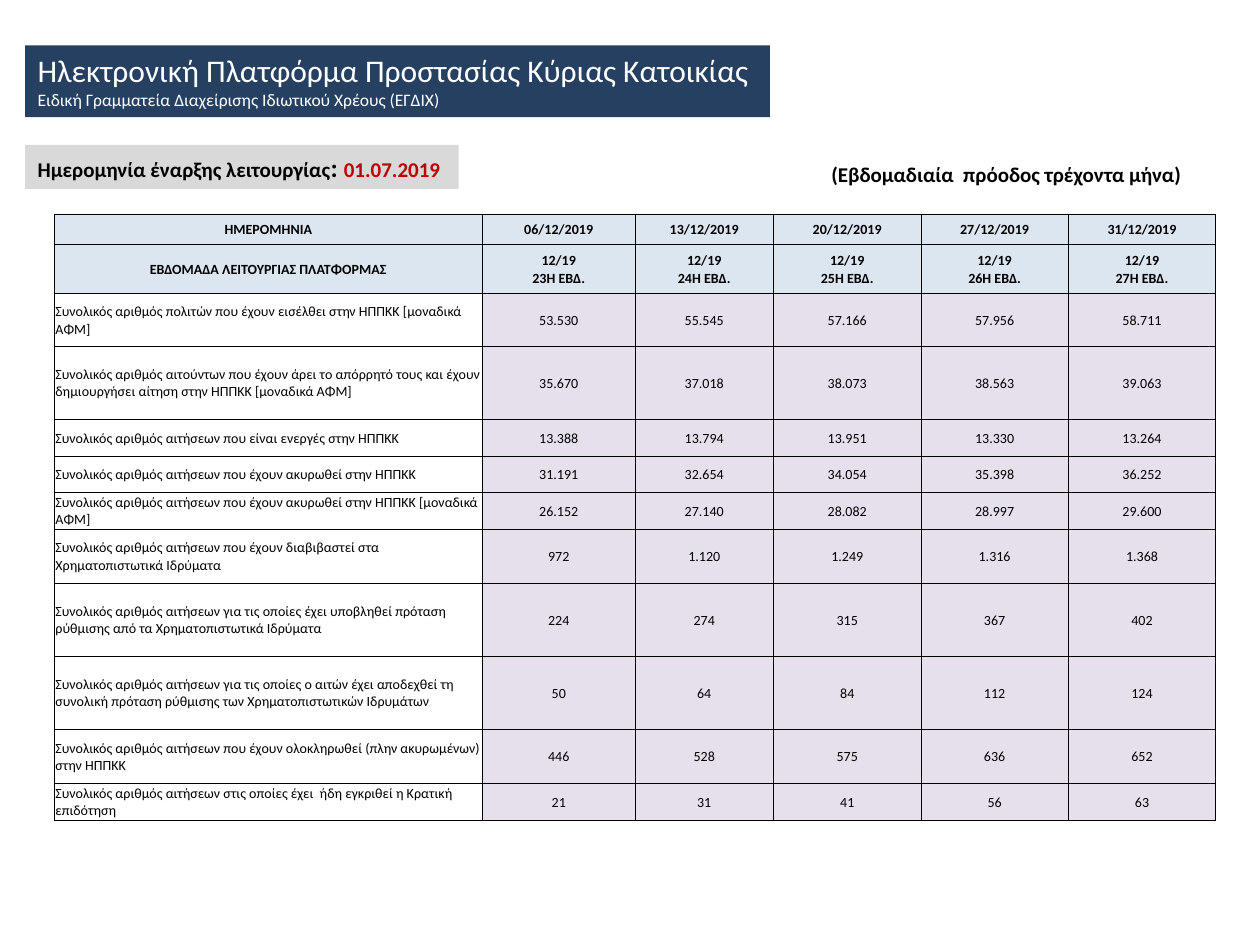
from lxml.etree import SubElement
from pptx import Presentation
from pptx.dml.color import RGBColor
from pptx.enum.shapes import MSO_SHAPE as Shape
from pptx.enum.text import MSO_ANCHOR as Anchor, MSO_AUTO_SIZE as AutoSize, PP_ALIGN as Align
from pptx.oxml.ns import qn
from pptx.util import Inches, Pt

FONT = "Calibri"
BLACK, WHITE, RED = "000000", "FFFFFF", "C00000"
NAVY, GREY, HEADER_BLUE, VALUE_LILAC = "254061", "D9D9D9", "DCE6F1", "E6E0EC"

TITLE = [
    [("Ηλεκτρονική Πλατφόρμα Προστασίας Κύριας Κατοικίας", 18, WHITE)],
    [("Ειδική Γραμματεία Διαχείρισης Ιδιωτικού Χρέους (ΕΓΔΙΧ)", 10, WHITE)],
]
START_DATE = [[
    ("Ημερομηνία έναρξης λειτουργίας", 12, BLACK),
    (": ", 15, BLACK),
    ("01.07.2019", 12, RED),
]]
PERIOD = [[("(Εβδομαδιαία  πρόοδος τρέχοντα μήνα)", 12, BLACK)]]
BOXES = [
    (START_DATE, (0.2, 1.15, 3.44, 0.35), GREY, True),
    (TITLE, (0.2, 0.36, 5.91, 0.57), NAVY, False),
    (PERIOD, (6.5, 1.23, 3.02, 0.3), None, True),
]

DATES = ["06/12/2019", "13/12/2019", "20/12/2019", "27/12/2019", "31/12/2019"]
FIRST_WEEK = 23
MEASURES = [
    (0.42, "Συνολικός αριθμός πολιτών που έχουν εισέλθει στην ΗΠΠΚΚ [μοναδικά ΑΦΜ]",
     "53.530 55.545 57.166 57.956 58.711"),
    (0.58, "Συνολικός αριθμός αιτούντων που έχουν άρει το απόρρητό τους και έχουν "
     "δημιουργήσει αίτηση στην ΗΠΠΚΚ [μοναδικά ΑΦΜ]",
     "35.670 37.018 38.073 38.563 39.063"),
    (0.29, "Συνολικός αριθμός αιτήσεων που είναι ενεργές στην ΗΠΠΚΚ",
     "13.388 13.794 13.951 13.330 13.264"),
    (0.29, "Συνολικός αριθμός αιτήσεων που έχουν ακυρωθεί στην ΗΠΠΚΚ",
     "31.191 32.654 34.054 35.398 36.252"),
    (0.29, "Συνολικός αριθμός αιτήσεων που έχουν ακυρωθεί στην ΗΠΠΚΚ [μοναδικά ΑΦΜ]",
     "26.152 27.140 28.082 28.997 29.600"),
    (0.43, "Συνολικός αριθμός αιτήσεων που έχουν διαβιβαστεί στα Χρηματοπιστωτικά Ιδρύματα",
     "972 1.120 1.249 1.316 1.368"),
    (0.58, "Συνολικός αριθμός αιτήσεων για τις οποίες έχει υποβληθεί πρόταση ρύθμισης "
     "από τα Χρηματοπιστωτικά Ιδρύματα",
     "224 274 315 367 402"),
    (0.58, "Συνολικός αριθμός αιτήσεων για τις οποίες ο αιτών έχει αποδεχθεί τη συνολική "
     "πρόταση ρύθμισης των Χρηματοπιστωτικών Ιδρυμάτων",
     "50 64 84 112 124"),
    (0.43, "Συνολικός αριθμός αιτήσεων που έχουν ολοκληρωθεί (πλην ακυρωμένων) στην ΗΠΠΚΚ",
     "446 528 575 636 652"),
    (0.29, "Συνολικός αριθμός αιτήσεων στις οποίες έχει  ήδη εγκριθεί η Κρατική επιδότηση",
     "21 31 41 56 63"),
]
COLUMN_WIDTHS = [3.4, 1.21, 1.1, 1.17, 1.17, 1.17]
HEADER_HEIGHTS = [0.24, 0.39]
TABLE_LEFT, TABLE_TOP = 0.43, 1.7


def color(value):
    return RGBColor.from_string(value)


def style(font, size, ink, bold):
    font.name, font.size, font.bold = FONT, Pt(size), bold
    font.color.rgb = color(ink)


def add_box(slide, lines, place, fill, bold):
    area = [Inches(length) for length in place]
    if fill:
        box = slide.shapes.add_shape(Shape.RECTANGLE, *area)
        box.shadow.inherit = False
        box.fill.solid()
        box.fill.fore_color.rgb = color(fill)
        box.line.fill.background()
    else:
        box = slide.shapes.add_textbox(*area)
    frame = box.text_frame
    frame.word_wrap, frame.auto_size = False, AutoSize.SHAPE_TO_FIT_TEXT
    frame.vertical_anchor = Anchor.TOP
    for number, pieces in enumerate(lines):
        line = frame.add_paragraph() if number else frame.paragraphs[0]
        line.alignment = Align.LEFT
        for words, size, ink in pieces:
            run = line.add_run()
            run.text = words
            style(run.font, size, ink, bold)


def add_borders(cell):
    properties = cell._tc.get_or_add_tcPr()
    for side in ("a:lnL", "a:lnR", "a:lnT", "a:lnB"):
        border = SubElement(properties, qn(side), w=str(Pt(0.5)))
        SubElement(SubElement(border, qn("a:solidFill")), qn("a:srgbClr"), val=BLACK)


def fill_cell(cell, words, fill, align, bold):
    cell.margin_left = cell.margin_right = cell.margin_top = Inches(0.01)
    cell.margin_bottom = 0
    cell.vertical_anchor = Anchor.MIDDLE
    add_borders(cell)
    if fill:
        cell.fill.solid()
        cell.fill.fore_color.rgb = color(fill)
    else:
        cell.fill.background()
    entry = cell.text_frame.paragraphs[0]
    entry.text, entry.alignment = words, align
    style(entry.font, 8, BLACK, bold)


def add_progress_table(slide):
    weeks = [f"12/19\n{FIRST_WEEK + offset}Η ΕΒΔ." for offset in range(len(DATES))]
    rows = [["ΗΜΕΡΟΜΗΝΙΑ", *DATES], ["ΕΒΔΟΜΑΔΑ ΛΕΙΤΟΥΡΓΙΑΣ ΠΛΑΤΦΟΡΜΑΣ", *weeks]]
    rows += [[label, *values.split()] for _, label, values in MEASURES]
    heights = HEADER_HEIGHTS + [height for height, _, _ in MEASURES]
    table = slide.shapes.add_table(
        len(rows), len(COLUMN_WIDTHS), Inches(TABLE_LEFT), Inches(TABLE_TOP),
        Inches(sum(COLUMN_WIDTHS)), Inches(sum(heights))).table
    table.first_row = table.horz_banding = False
    for column, width in zip(table.columns, COLUMN_WIDTHS):
        column.width = Inches(width)
    for r, (words_in_row, height) in enumerate(zip(rows, heights)):
        table.rows[r].height = Inches(height)
        header = r < len(HEADER_HEIGHTS)
        for c, words in enumerate(words_in_row):
            fill = HEADER_BLUE if header else VALUE_LILAC if c else None
            align = Align.CENTER if header or c else Align.LEFT
            fill_cell(table.cell(r, c), words, fill, align, header)


def main():
    """Build the weekly progress slide of the home protection platform."""
    deck = Presentation()
    deck.slide_width, deck.slide_height = Inches(10), Inches(7.5)
    slide = deck.slides.add_slide(deck.slide_layouts[6])
    for box in BOXES:
        add_box(slide, *box)
    add_progress_table(slide)
    deck.save("out.pptx")


if __name__ == "__main__":
    main()
